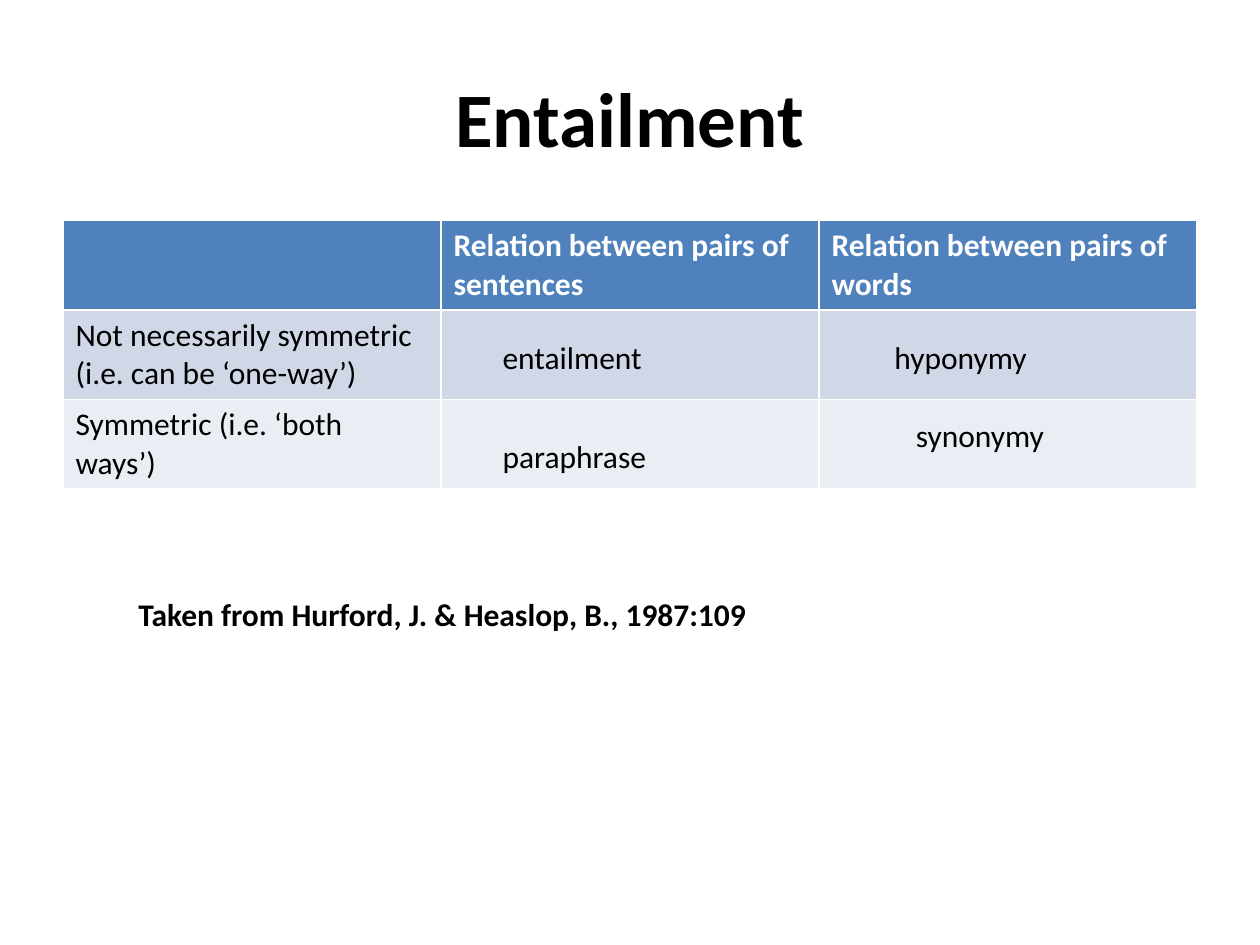
"""Build the Entailment slide: a table of sense relations with its terms and source."""
from dataclasses import dataclass

import pptx
import pptx.dml.color
import pptx.enum.text
import pptx.presentation
import pptx.slide
import pptx.text.text
import pptx.util
from pptx.util import Inches


@dataclass(frozen=True)
class Theme:
    font: str = "Calibri"
    title_size: int = 44
    body_size: int = 18
    ink: str = "000000"
    header_ink: str = "FFFFFF"
    header_fill: str = "4F81BD"
    band_fills: tuple[str, str] = ("D0D8E8", "E9EDF4")


@dataclass(frozen=True)
class Label:
    text: str
    left: float
    top: float
    width: float
    bold: bool = False


THEME = Theme()
ROW_HEIGHT = 0.7
COLUMN_WIDTH = 3
LABEL_HEIGHT = 0.4

RELATIONS = (
    ("", "Relation between pairs of sentences", "Relation between pairs of words"),
    ("Not necessarily symmetric (i.e. can be ‘one-way’)", "", ""),
    ("Symmetric (i.e. ‘both ways’)", "", ""),
)

LABELS = (
    Label("entailment", 3.89, 2.63, 1.32),
    Label("hyponymy", 7, 2.63, 1.26),
    Label("paraphrase", 3.89, 3.42, 1.35),
    Label("synonymy", 7.17, 3.25, 1.23),
    Label("Taken from Hurford, J. & Heaslop, B., 1987:109", 1, 4.67, 5.07, bold=True),
)


def write(frame: pptx.text.text.TextFrame, text: str, size: int, color: str, bold: bool) -> None:
    frame.text = text
    font = frame.paragraphs[0].font
    font.name = THEME.font
    font.size = pptx.util.Pt(size)
    font.bold = bold
    font.color.rgb = pptx.dml.color.RGBColor.from_string(color)


def add_title(slide: pptx.slide.Slide, text: str) -> None:
    title = slide.shapes.title
    title.left, title.top = Inches(0.5), Inches(0.3)
    title.width, title.height = Inches(9), Inches(1.25)
    write(title.text_frame, text, THEME.title_size, THEME.ink, True)
    title.text_frame.vertical_anchor = pptx.enum.text.MSO_ANCHOR.MIDDLE
    title.text_frame.paragraphs[0].alignment = pptx.enum.text.PP_ALIGN.CENTER


def add_relations(slide: pptx.slide.Slide, rows: tuple[tuple[str, ...], ...]) -> None:
    row_count, column_count = len(rows), len(rows[0])
    table = slide.shapes.add_table(
        row_count, column_count, Inches(0.5), Inches(1.75),
        Inches(COLUMN_WIDTH * column_count), Inches(ROW_HEIGHT * row_count),
    ).table
    fills = (THEME.header_fill, *THEME.band_fills)
    for row, (texts, fill) in enumerate(zip(rows, fills)):
        is_header = row == 0
        ink = THEME.header_ink if is_header else THEME.ink
        for column, text in enumerate(texts):
            cell = table.cell(row, column)
            cell.fill.solid()
            cell.fill.fore_color.rgb = pptx.dml.color.RGBColor.from_string(fill)
            write(cell.text_frame, text, THEME.body_size, ink, is_header)


def add_label(slide: pptx.slide.Slide, label: Label) -> None:
    box = slide.shapes.add_textbox(
        Inches(label.left), Inches(label.top), Inches(label.width), Inches(LABEL_HEIGHT)
    )
    write(box.text_frame, label.text, THEME.body_size, THEME.ink, label.bold)
    box.text_frame.word_wrap = False
    box.text_frame.auto_size = pptx.enum.text.MSO_AUTO_SIZE.SHAPE_TO_FIT_TEXT


def main() -> None:
    deck = pptx.Presentation()
    deck.slide_width, deck.slide_height = Inches(10), Inches(7.5)
    slide = deck.slides.add_slide(deck.slide_layouts.get_by_name("Title Only"))
    add_title(slide, "Entailment")
    add_relations(slide, RELATIONS)
    for label in LABELS:
        add_label(slide, label)
    deck.save("out.pptx")


if __name__ == "__main__":
    main()
